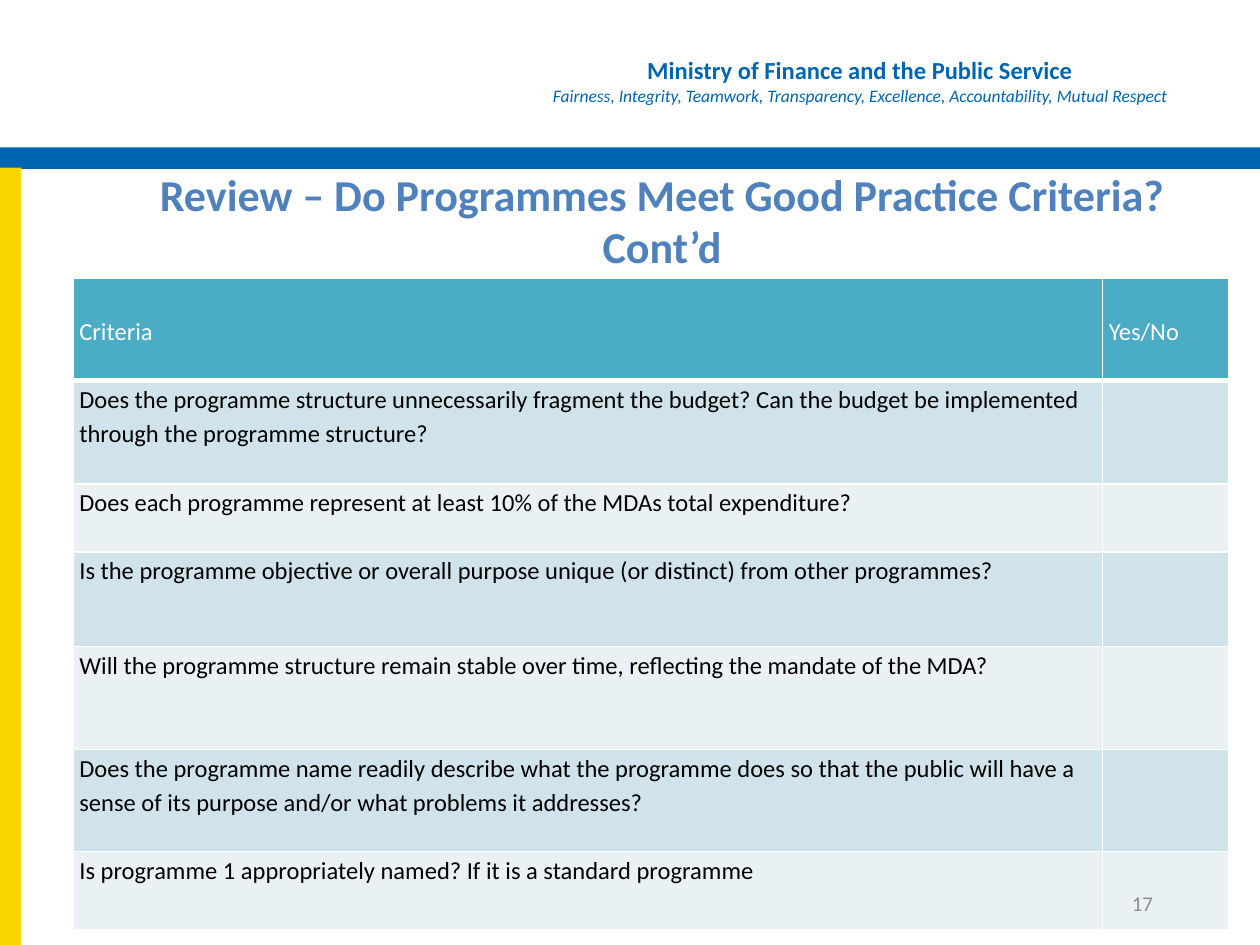
from dataclasses import dataclass

from lxml.etree import SubElement
from pptx import Presentation
from pptx.dml.color import RGBColor
from pptx.enum.shapes import MSO_SHAPE
from pptx.enum.text import MSO_ANCHOR, MSO_AUTO_SIZE, PP_ALIGN
from pptx.oxml.ns import qn
from pptx.util import Inches, Pt


@dataclass(frozen=True)
class Theme:
    font: str = "Calibri"
    blue: str = "0065B0"
    yellow: str = "F9D600"
    title: str = "4F81BD"
    header: str = "4BACC6"
    bands: tuple = ("D0E3EA", "E9F1F5")
    white: str = "FFFFFF"
    black: str = "000000"
    grey: str = "8C8C8C"
    title_size: float = 25.2
    body_size: int = 14
    number_size: int = 12
    motto_size: int = 10


THEME = Theme()

CRITERIA = [
    "Does the programme structure unnecessarily fragment the budget? "
    "Can the budget be implemented through the programme structure?",
    "Does each programme represent at least 10% of the MDAs total expenditure?",
    "Is the programme objective or overall purpose unique (or distinct) from other programmes?",
    "Will the programme structure remain stable over time, reflecting the mandate of the MDA?",
    "Does the programme name readily describe what the programme does so that the public "
    "will have a sense of its purpose and/or what problems it addresses?",
    "Is programme 1 appropriately named? If it is a standard programme",
]
ROW_HEIGHTS = [0.81, 0.82, 0.54, 0.75, 0.82, 0.81, 0.62]
COLUMN_WIDTHS = [8.17, 1]


def place(shape, left, top, width, height):
    shape.left, shape.top = Inches(left), Inches(top)
    shape.width, shape.height = Inches(width), Inches(height)


def style(paragraph, size, color, bold=False, italic=False, alignment=None):
    font = paragraph.font
    font.name, font.size = THEME.font, Pt(size)
    font.bold, font.italic = bold, italic
    font.color.rgb = RGBColor.from_string(color)
    paragraph.alignment = alignment


def add_bar(slide, left, top, width, height, color):
    bar = slide.shapes.add_shape(
        MSO_SHAPE.RECTANGLE, Inches(left), Inches(top), Inches(width), Inches(height))
    bar.shadow.inherit = False
    bar.fill.solid()
    bar.fill.fore_color.rgb = RGBColor.from_string(color)
    bar.line.fill.background()


def add_text(slide, left, top, width, height, lines, anchor=MSO_ANCHOR.TOP):
    """Each line is a pair: its text and its style arguments."""
    box = slide.shapes.add_textbox(
        Inches(left), Inches(top), Inches(width), Inches(height))
    frame = box.text_frame
    frame.word_wrap = True
    frame.vertical_anchor = anchor
    frame.text = "\n".join(text for text, _ in lines)
    for paragraph, (_, options) in zip(frame.paragraphs, lines):
        style(paragraph, **options)


def set_title(slide, text):
    title = slide.shapes.title
    place(title, 0.67, 1.58, 9.17, 0.33)
    frame = title.text_frame
    frame.text = text
    frame.auto_size = MSO_AUTO_SIZE.NONE
    frame.vertical_anchor = MSO_ANCHOR.MIDDLE
    style(frame.paragraphs[0], THEME.title_size, THEME.title,
          bold=True, alignment=PP_ALIGN.CENTER)


def set_borders(cell, bottom_width):
    properties = cell._tc.get_or_add_tcPr()
    widths = {"a:lnL": 1, "a:lnR": 1, "a:lnT": 1, "a:lnB": bottom_width}
    for tag, width in widths.items():
        line = SubElement(properties, qn(tag), w=str(Pt(width)))
        fill = SubElement(line, qn("a:solidFill"))
        SubElement(fill, qn("a:srgbClr"), val=THEME.white)


def fill_cell(cell, text, fill, color, is_header):
    set_borders(cell, 3 if is_header else 1)
    cell.fill.solid()
    cell.fill.fore_color.rgb = RGBColor.from_string(fill)
    cell.margin_left = cell.margin_right = Inches(0.05)
    cell.margin_top = cell.margin_bottom = 0
    cell.vertical_anchor = MSO_ANCHOR.MIDDLE if is_header else MSO_ANCHOR.TOP
    cell.text = text
    paragraph = cell.text_frame.paragraphs[0]
    paragraph.line_spacing = 1.15
    style(paragraph, THEME.body_size, color)


def add_criteria_table(slide, left, top):
    rows = [("Criteria", "Yes/No")] + [(criterion, "") for criterion in CRITERIA]
    table = slide.shapes.add_table(
        len(rows), len(COLUMN_WIDTHS), Inches(left), Inches(top),
        Inches(sum(COLUMN_WIDTHS)), Inches(sum(ROW_HEIGHTS))).table
    for column, width in zip(table.columns, COLUMN_WIDTHS):
        column.width = Inches(width)
    for index, (row, height, texts) in enumerate(zip(table.rows, ROW_HEIGHTS, rows)):
        row.height = Inches(height)
        is_header = index == 0
        fill = THEME.header if is_header else THEME.bands[(index - 1) % 2]
        color = THEME.white if is_header else THEME.black
        for cell, text in zip(row.cells, texts):
            fill_cell(cell, text, fill, color, is_header)


def main():
    presentation = Presentation()
    presentation.slide_width, presentation.slide_height = Inches(10), Inches(7.5)
    slide = presentation.slides.add_slide(presentation.slide_layouts[5])

    # Ministry banner
    add_bar(slide, 0, 1.17, 10, 0.17, THEME.blue)
    add_bar(slide, 0, 1.33, 0.17, 6.17, THEME.yellow)
    banner = dict(color=THEME.blue, alignment=PP_ALIGN.CENTER)
    add_text(slide, 3.95, 0.39, 5.75, 0.5, [
        ("Ministry of Finance and the Public Service",
         dict(banner, size=THEME.body_size, bold=True)),
        ("Fairness, Integrity, Teamwork, Transparency, Excellence, "
         "Accountability, Mutual Respect",
         dict(banner, size=THEME.motto_size, italic=True)),
    ])

    # Title and checklist
    set_title(slide, "Review – Do Programmes Meet Good Practice Criteria? Cont’d")
    add_criteria_table(slide, 0.58, 2.21)

    # Page number
    add_text(slide, 7.17, 7, 2.08, 0.33, [
        ("17", dict(size=THEME.number_size, color=THEME.grey, alignment=PP_ALIGN.RIGHT)),
    ], MSO_ANCHOR.MIDDLE)

    presentation.save("out.pptx")


if __name__ == "__main__":
    main()
